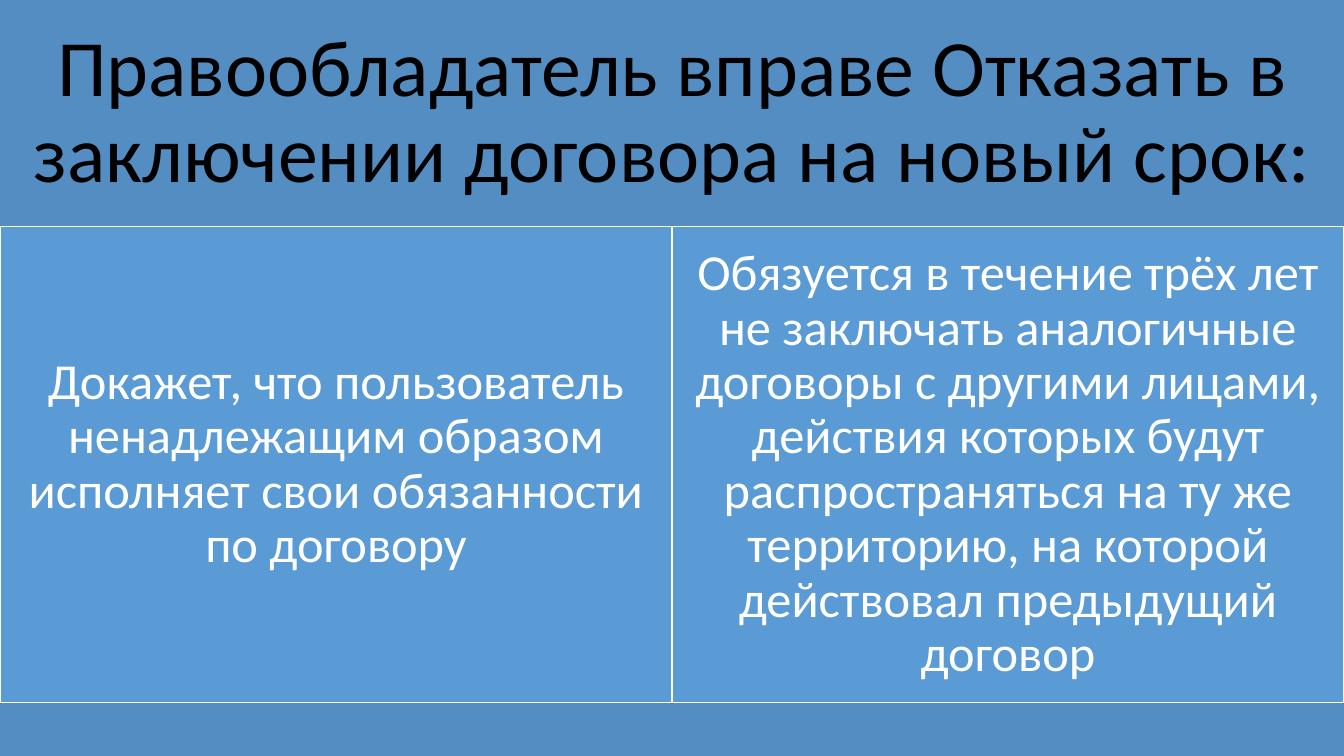
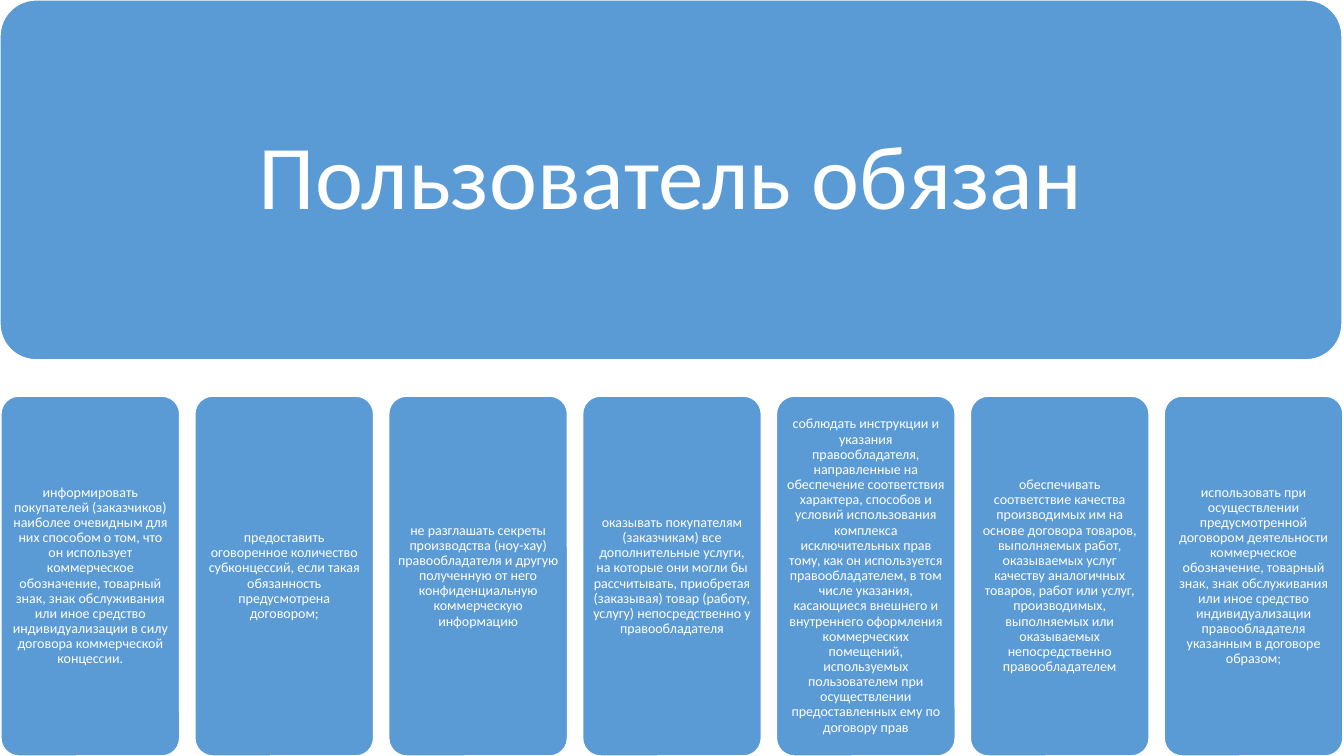
from pptx import Presentation, util as u
from pptx.dml.color import RGBColor
from pptx.enum import shapes as sh, text as tx

# Shared look
COL = {"band": "538DC1", "card": "5B9BD5", "white": "FFFFFF", "black": "000000"}
FONT = "Calibri"
RECT, ROUND = sh.MSO_SHAPE.RECTANGLE, sh.MSO_SHAPE.ROUNDED_RECTANGLE

prs = Presentation()
prs.slide_width, prs.slide_height = W, H = u.Inches(13.333), u.Inches(7.5)


def write(shape, words, size, pad, color="white"):
    """Put centred text into a shape or placeholder."""
    frame = shape.text_frame
    frame.text = words
    pad = u.Inches(pad)
    form = {"word_wrap": True, "auto_size": tx.MSO_AUTO_SIZE.NONE,
            "vertical_anchor": tx.MSO_ANCHOR.MIDDLE,
            "margin_left": pad, "margin_right": pad,
            "margin_top": pad, "margin_bottom": pad}
    for key, val in form.items():
        setattr(frame, key, val)
    para = frame.paragraphs[0]
    para.alignment, para.line_spacing = tx.PP_ALIGN.CENTER, 0.9
    font = para.runs[0].font
    font.name, font.size = FONT, u.Pt(size)
    font.color.rgb = RGBColor.from_string(COL[color])


def box(slide, kind, place, fill="card", edge=True):
    """Draw a filled box, with a thin white edge if asked."""
    shape = slide.shapes.add_shape(kind, *map(int, place))
    shape.shadow.inherit = False
    shape.fill.solid()
    shape.fill.fore_color.rgb = RGBColor.from_string(COL[fill])
    if edge:
        shape.line.color.rgb = RGBColor.from_string(COL["white"])
        shape.line.width = u.Pt(1)
    else:
        shape.line.fill.background()
    if kind == ROUND:
        shape.adjustments[0] = 0.1
    return shape


# Each slide: title, its size, padding and colour, then cards
DECK = [
    ("Правообладатель вправе Отказать в заключении договора на новый срок:",
     57, 0.24, "black", [
         "Докажет, что пользователь ненадлежащим образом исполняет свои "
         "обязанности по договору",
         "Обязуется в течение трёх лет не заключать аналогичные договоры с "
         "другими лицами, действия которых будут распространяться на ту же "
         "территорию, на которой действовал предыдущий договор",
     ]),
    ("Пользователь обязан", 65, 0.27, "white", [
        "информировать покупателей (заказчиков) наиболее очевидным для них "
        "способом о том, что он использует коммерческое обозначение, товарный "
        "знак, знак обслуживания или иное средство индивидуализации в силу "
        "договора коммерческой концессии.",
        "предоставить оговоренное количество субконцессий, если такая "
        "обязанность предусмотрена договором;",
        "не разглашать секреты производства (ноу-хау) правообладателя и другую "
        "полученную от него конфиденциальную коммерческую информацию",
        "оказывать покупателям (заказчикам) все дополнительные услуги, на "
        "которые они могли бы рассчитывать, приобретая (заказывая) товар "
        "(работу, услугу) непосредственно у правообладателя",
        "соблюдать инструкции и указания правообладателя, направленные на "
        "обеспечение соответствия характера, способов и условий использования "
        "комплекса исключительных прав тому, как он используется "
        "правообладателем, в том числе указания, касающиеся внешнего и "
        "внутреннего оформления коммерческих помещений, используемых "
        "пользователем при осуществлении предоставленных ему по договору прав",
        "обеспечивать соответствие качества производимых им на основе договора "
        "товаров, выполняемых работ, оказываемых услуг качеству аналогичных "
        "товаров, работ или услуг, производимых, выполняемых или оказываемых "
        "непосредственно правообладателем",
        "использовать при осуществлении предусмотренной договором деятельности "
        "коммерческое обозначение, товарный знак, знак обслуживания или иное "
        "средство индивидуализации правообладателя указанным в договоре "
        "образом;",
    ]),
]

# Card rows: shape, top, height, side margin, gap, text size, padding
ROWS = [
    (RECT, 0.3 * H, 0.63 * H, 0, 0, 36, 0.15),
    (ROUND, H - u.Inches(3.57), u.Inches(3.57), u.Inches(0.01),
     u.Inches(0.15), 10, 0.04),
]

# Heads: shape, place, fill, edge
HEADS = [
    (RECT, (0, 0, W, 0.3 * H), "band", False),
    (ROUND, (0, 0, W - u.Inches(0.02), u.Inches(3.57)), "card", True),
]

for (name, size, pad, ink, cards), row, head in zip(DECK, ROWS, HEADS):
    slide = prs.slides.add_slide(prs.slide_layouts[5])

    # Title on top of its head box
    box(slide, *head)
    title = slide.shapes.title
    title.left, title.top, title.width, title.height = map(int, head[1])
    write(title, name, size, pad, ink)
    slide.shapes.element.append(title.element)

    # Row of equal cards
    kind, top, high, side, gap, size, pad = row
    count = len(cards)
    wide = (W - 2 * side - (count - 1) * gap) / count
    for col, words in enumerate(cards):
        place = (side + col * (wide + gap), top, wide, high)
        write(box(slide, kind, place), words, size, pad)

# Foot band of the first slide
box(prs.slides[0], RECT, (0, 0.93 * H, W, 0.07 * H), "band", False)

prs.save("out.pptx")
